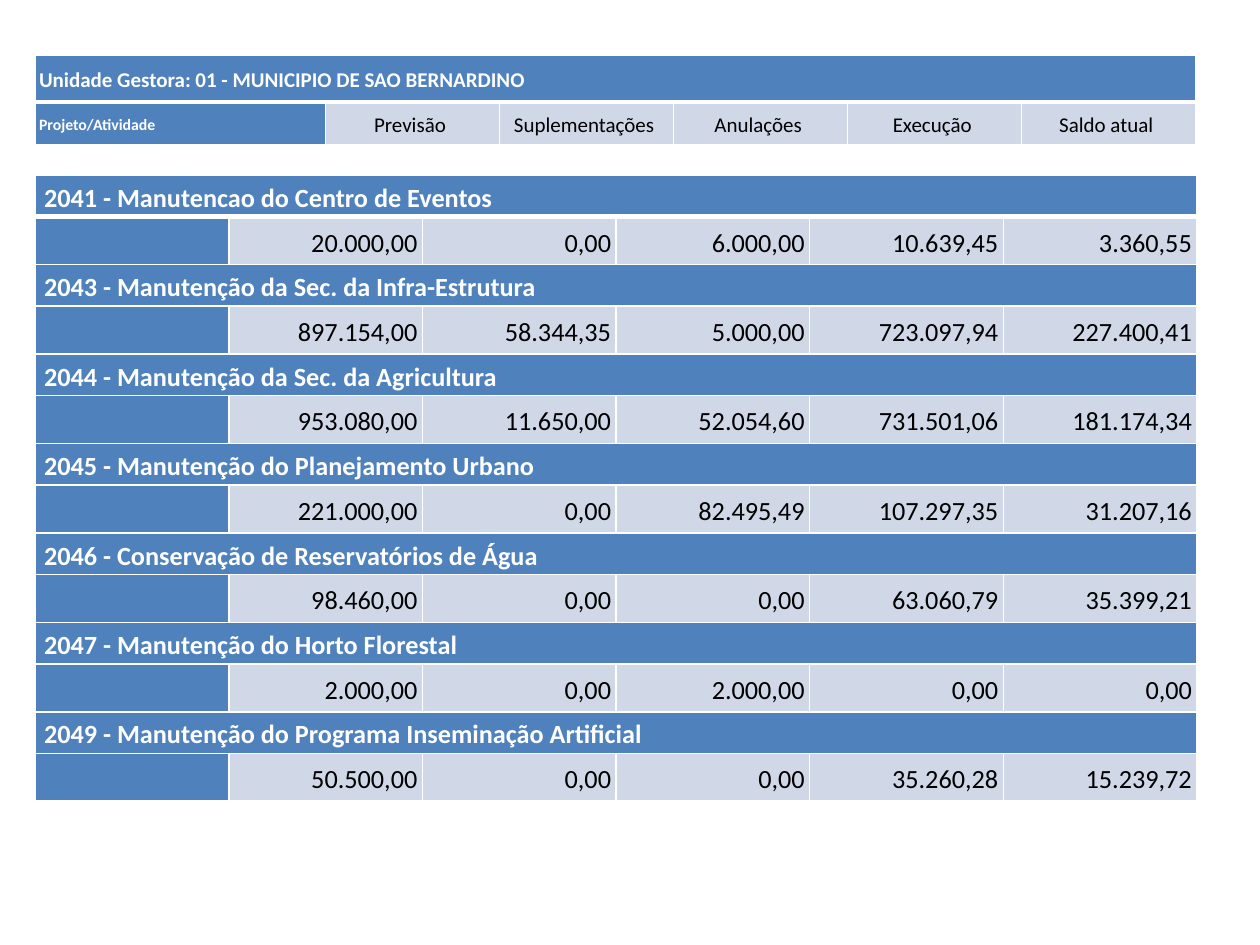
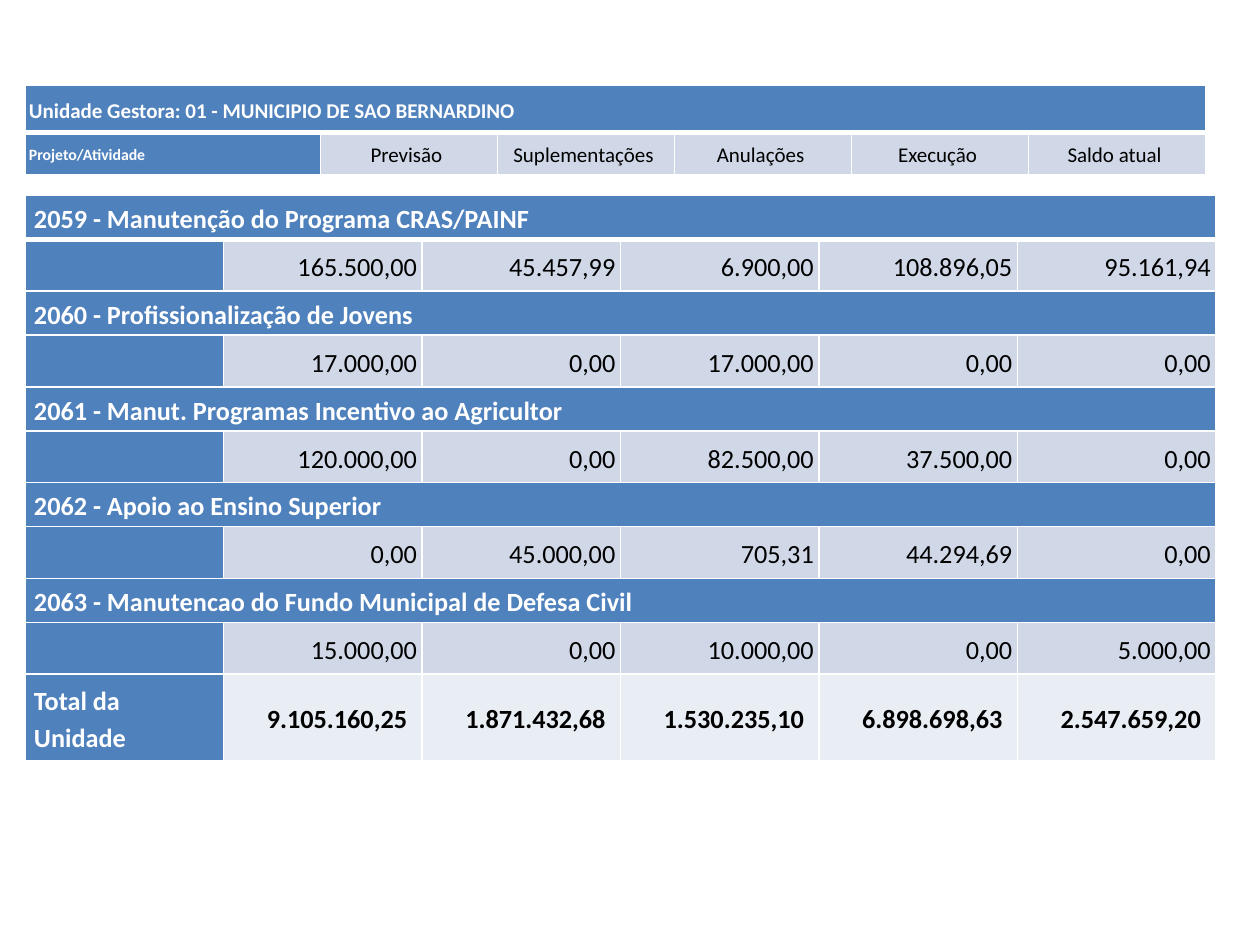
"""Build two slides of municipal budget tables."""
from lxml import etree
from pptx import Presentation
from pptx import util as u
from pptx.dml import color
from pptx.enum import text
from pptx.oxml import ns

BLUE = color.RGBColor(0x4F, 0x81, 0xBD)
PALE = color.RGBColor(0xD0, 0xD8, 0xE8)
LIGHT = color.RGBColor(0xE9, 0xED, 0xF4)
WHITE = color.RGBColor(0xFF, 0xFF, 0xFF)
BLACK = color.RGBColor(0, 0, 0)
FONT = "Calibri"
LEFT, MID, RIGHT = text.PP_ALIGN.LEFT, text.PP_ALIGN.CENTER, text.PP_ALIGN.RIGHT
COLS = 6
UNIT = "Unidade Gestora: 01 - MUNICIPIO DE SAO BERNARDINO"
HEADS = ["Previsão ", "Suplementações ", "Anulações ", "Execução ", "Saldo atual "]

WORKS = [
    ("2041 - Manutencao do Centro de Eventos",
     ["20.000,00", "0,00", "6.000,00", "10.639,45", "3.360,55"]),
    ("2043 - Manutenção da Sec. da Infra-Estrutura",
     ["897.154,00", "58.344,35", "5.000,00", "723.097,94", "227.400,41"]),
    ("2044 - Manutenção da Sec. da Agricultura",
     ["953.080,00", "11.650,00", "52.054,60", "731.501,06", "181.174,34"]),
    ("2045 - Manutenção do Planejamento Urbano",
     ["221.000,00", "0,00", "82.495,49", "107.297,35", "31.207,16"]),
    ("2046 - Conservação de Reservatórios de Água",
     ["98.460,00", "0,00", "0,00", "63.060,79", "35.399,21"]),
    ("2047 - Manutenção do Horto Florestal",
     ["2.000,00", "0,00", "2.000,00", "0,00", "0,00"]),
    ("2049 - Manutenção do Programa Inseminação Artificial",
     ["50.500,00", "0,00", "0,00", "35.260,28", "15.239,72"]),
]
GRANTS = [
    ("2059 - Manutenção do Programa CRAS/PAINF",
     ["165.500,00", "45.457,99", "6.900,00", "108.896,05", "95.161,94"]),
    ("2060 - Profissionalização de Jovens",
     ["17.000,00", "0,00", "17.000,00", "0,00", "0,00"]),
    ("2061 - Manut. Programas Incentivo ao Agricultor",
     ["120.000,00", "0,00", "82.500,00", "37.500,00", "0,00"]),
    ("2062 - Apoio ao Ensino Superior",
     ["0,00", "45.000,00", "705,31", "44.294,69", "0,00"]),
    ("2063 - Manutencao do Fundo Municipal de Defesa Civil",
     ["15.000,00", "0,00", "10.000,00", "0,00", "5.000,00"]),
]
TOTAL = ["9.105.160,25 ", "1.871.432,68 ", "1.530.235,10 ",
         "6.898.698,63 ", "2.547.659,20 "]


def edge(cell, side, width):
    line = etree.SubElement(cell._tc.get_or_add_tcPr(), ns.qn(f"a:ln{side}"),
                            w=str(u.Pt(width)))
    fill = etree.SubElement(line, ns.qn("a:solidFill"))
    etree.SubElement(fill, ns.qn("a:srgbClr"), val=str(WHITE))


def write(cell, words, size=15, ink=WHITE, bold=True, align=LEFT,
          fill=BLUE, side=0.07, rim=0.01):
    cell.fill.solid()
    cell.fill.fore_color.rgb = fill
    cell.margin_left = cell.margin_right = u.Inches(side)
    cell.margin_top = cell.margin_bottom = u.Inches(rim)
    cell.vertical_anchor = text.MSO_ANCHOR.MIDDLE
    if not words:
        return
    para = cell.text_frame.paragraphs[0]
    para.alignment = align
    para.line_spacing = 1.15
    run = para.add_run()
    run.text = words
    run.font.name = FONT
    run.font.size = u.Pt(size)
    run.font.bold = bold
    run.font.color.rgb = ink


def fill_row(grid, row, first, rest, form, **label):
    write(grid.cell(row, 0), first, **label)
    for col, words in enumerate(rest, 1):
        write(grid.cell(row, col), words, **form)


def band(grid, row, words, **form):
    fill_row(grid, row, words, [""] * (COLS - 1), form, **form)
    grid.cell(row, 0).merge(grid.cell(row, COLS - 1))


def add_grid(slide, left, top, widths, heights):
    frame = slide.shapes.add_table(
        len(heights), COLS, u.Inches(left), u.Inches(top),
        u.Inches(sum(widths)), u.Inches(sum(heights)))
    grid = frame.table
    grid.first_row = grid.horz_banding = False
    for col, width in zip(grid.columns, widths):
        col.width = u.Inches(width)
    for row, height in zip(grid.rows, heights):
        row.height = u.Inches(height)
    for row in range(len(heights)):
        for col in range(COLS):
            for side in "LRTB":
                if (row, side) != (1, "T"):
                    edge(grid.cell(row, col), side, 3 if (row, side) == (0, "B") else 1)
    return grid


def add_head(slide, left, top, width):
    widths = [width * 0.25] + [width * 0.15] * len(HEADS)
    grid = add_grid(slide, left, top, widths, [0.37, 0.34])
    band(grid, 0, UNIT, size=12, side=0.03)
    form = dict(size=12, ink=BLACK, bold=False, align=MID, fill=PALE, side=0.03)
    fill_row(grid, 1, "Projeto/Atividade", HEADS, form, size=9, side=0.03)


def add_items(slide, left, top, width, items, pair, total=None):
    heights = pair * len(items) + ([0.69] if total else [])
    grid = add_grid(slide, left, top, [width / COLS] * COLS, heights)
    form = dict(ink=BLACK, bold=False, align=RIGHT, fill=PALE, side=0.04, rim=0.04)
    for place, (name, sums) in enumerate(items):
        band(grid, 2 * place, name)
        fill_row(grid, 2 * place + 1, "", sums, form)
    if total:
        form = dict(ink=BLACK, align=RIGHT, fill=LIGHT)
        fill_row(grid, 2 * len(items), "Total da Unidade", total, form)


def main():
    deck = Presentation()
    deck.slide_width, deck.slide_height = u.Inches(10), u.Inches(7.5)
    blank = deck.slide_layouts[6]

    slide = deck.slides.add_slide(blank)
    add_items(slide, 0.28, 1.39, 9.22, WORKS, [0.33, 0.38])
    add_head(slide, 0.28, 0.44, 9.21)

    slide = deck.slides.add_slide(blank)
    add_items(slide, 0.2, 1.55, 9.45, GRANTS, [0.35, 0.41], TOTAL)
    add_head(slide, 0.2, 0.68, 9.37)

    deck.save("out.pptx")


if __name__ == "__main__":
    main()
